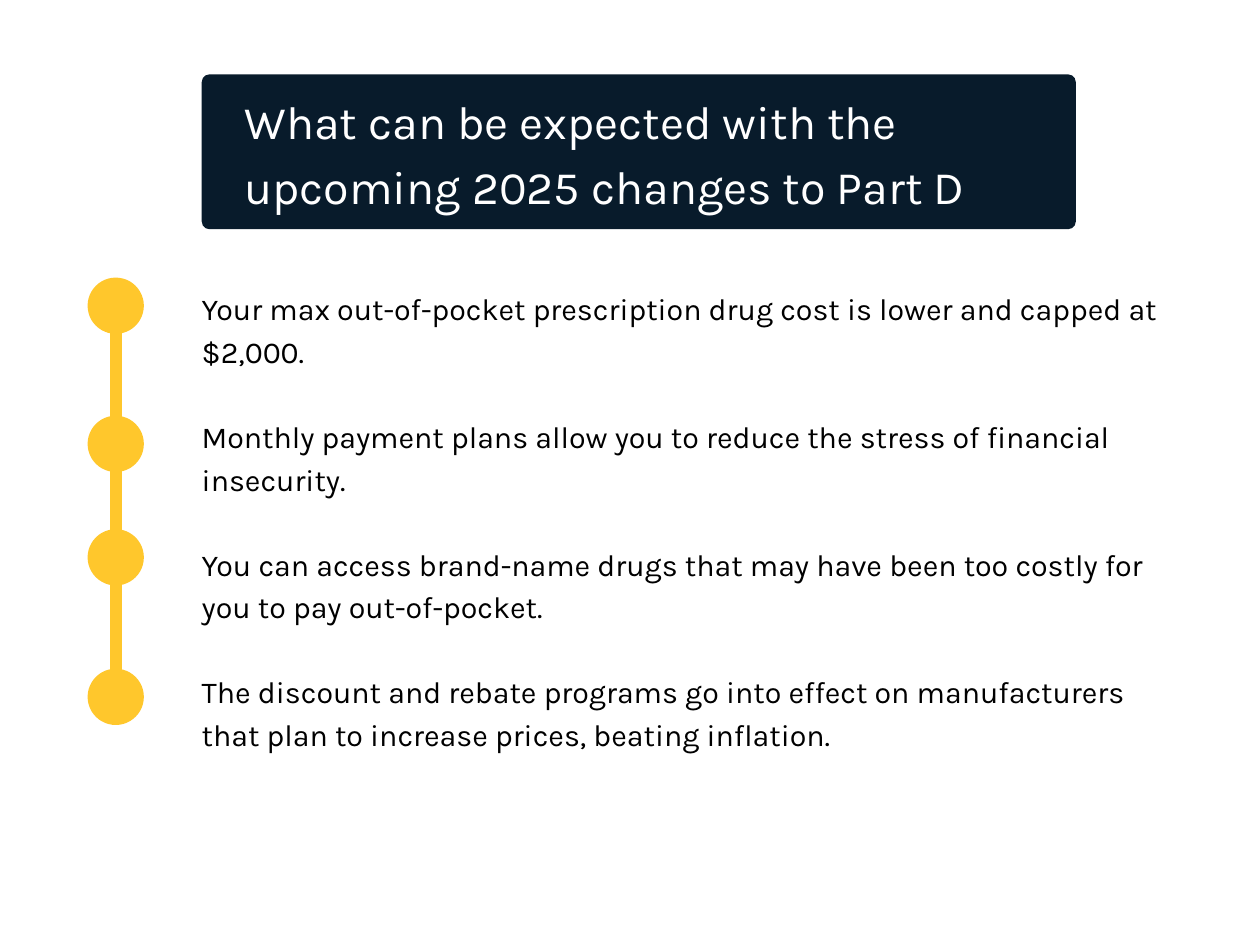
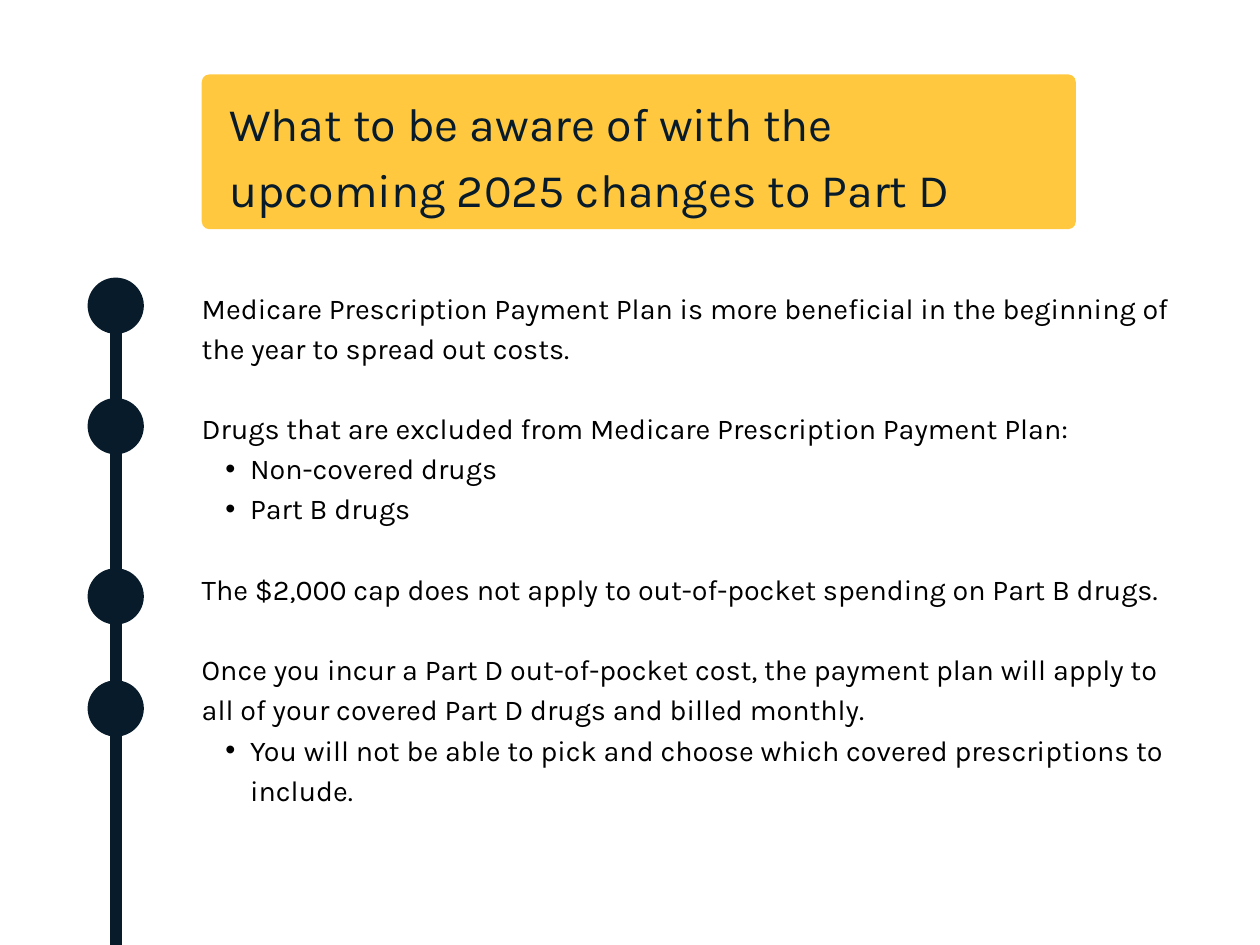
from pptx import Presentation
from pptx.dml.color import RGBColor
from pptx.enum.shapes import MSO_CONNECTOR, MSO_SHAPE
from pptx.oxml.ns import qn
from pptx.util import Cm, Pt
from lxml import etree

NAVY, GOLD, AMBER = "081B2B", "FFC72C", "FFC83F"
BLACK, WHITE = "000000", "FFFFFF"
FONT = "Karla"
SLIDE_W, SLIDE_H = 27.1, 20.32
BANNER = (4.34, 1.6, 18.8, 3.33)
TITLE_SIZE, TITLE_LEADING = 28.4, 39.8
SPINE_X, SPINE_TOP, DOT = 2.49, 6.2, 1.21
BODY_X, BODY_Y = 4.34, 6.12


def rgb(color):
    return RGBColor.from_string(color)


def add_solid(s, kind, box, color):
    sp = s.shapes.add_shape(kind, *map(Cm, box))
    sp.shadow.inherit = False
    sp.fill.solid()
    sp.fill.fore_color.rgb = rgb(color)
    sp.line.fill.background()
    return sp


def add_bullet(p):
    pPr = p._p.get_or_add_pPr()
    pPr.set("marL", str(Cm(1.04)))
    pPr.set("indent", str(-Cm(0.53)))
    etree.SubElement(pPr, qn("a:buFont")).set("typeface", "Arial")
    etree.SubElement(pPr, qn("a:buChar")).set("char", "•")


def add_text(s, box, items, size, leading, color):
    """Write (text, is_bullet) items; plain items stand one line apart."""
    tf = s.shapes.add_textbox(*map(Cm, box)).text_frame
    tf.word_wrap = True
    tf.margin_left = tf.margin_top = tf.margin_right = tf.margin_bottom = 0
    for i, (text, is_bullet) in enumerate(items):
        p = tf.add_paragraph() if i else tf.paragraphs[0]
        if is_bullet:
            p.level = 1
            add_bullet(p)
        p.line_spacing = Pt(leading)
        if i and not is_bullet:
            p.space_before = Pt(leading)
        r = p.add_run()
        r.text = text
        r.font.name = FONT
        r.font.size = Pt(size)
        r.font.color.rgb = rgb(color)


def add_banner(s, box, title, inset, text_w, fill, color):
    x, y, w, h = box
    sp = add_solid(s, MSO_SHAPE.ROUNDED_RECTANGLE, box, fill)
    sp.adjustments[0] = 0.05
    dx, dy = inset
    add_text(s, (x + dx, y + dy, text_w, 2.69), [(title, False)],
             TITLE_SIZE, TITLE_LEADING, color)


def add_timeline(s, x, top, bottom, dot_tops, color):
    line = s.shapes.add_connector(MSO_CONNECTOR.STRAIGHT,
                                  Cm(x), Cm(bottom), Cm(x), Cm(top))
    line.line.color.rgb = rgb(color)
    line.line.width = Pt(7.5)
    etree.SubElement(line._element.spPr, qn("a:effectLst"))
    for dot_top in dot_tops:
        add_solid(s, MSO_SHAPE.OVAL, (x - DOT / 2, dot_top, DOT, DOT), color)


def add_changes_slide(prs, title, inset, title_w, banner_fill, title_color,
                      spine_color, spine_end, dot_tops,
                      body_size, items, body_w, body_h):
    s = prs.slides.add_slide(prs.slide_layouts[6])
    s.background.fill.solid()
    s.background.fill.fore_color.rgb = rgb(WHITE)
    add_timeline(s, SPINE_X, SPINE_TOP, spine_end, dot_tops, spine_color)
    add_text(s, (BODY_X, BODY_Y, body_w, body_h), items,
             body_size, round(body_size * 1.4, 1), BLACK)
    add_banner(s, BANNER, title, inset, title_w, banner_fill, title_color)


def main():
    prs = Presentation()
    prs.slide_width, prs.slide_height = Cm(SLIDE_W), Cm(SLIDE_H)

    add_changes_slide(
        prs,
        title="What can be expected with the upcoming 2025 changes to Part D",
        inset=(0.92, 0.2), title_w=16.89,
        banner_fill=NAVY, title_color=WHITE,
        spine_color=GOLD, spine_end=15.04,
        dot_tops=(5.97, 8.94, 11.38, 14.38),
        body_size=18.5, body_w=21.06, body_h=10.13,
        items=[
            ("Your max out-of-pocket prescription drug cost is lower and "
             "capped at $2,000.", False),
            ("Monthly payment plans allow you to reduce the stress of "
             "financial insecurity.", False),
            ("You can access brand-name drugs that may have been too costly "
             "for you to pay out-of-pocket.", False),
            ("The discount and rebate programs go into effect on "
             "manufacturers that plan to increase prices, beating "
             "inflation.", False),
        ])

    add_changes_slide(
        prs,
        title="What to be aware of with the upcoming 2025 changes to Part D",
        inset=(0.59, 0.25), title_w=17.63,
        banner_fill=AMBER, title_color=NAVY,
        spine_color=NAVY, spine_end=SLIDE_H,
        dot_tops=(5.97, 8.56, 12.22, 14.63),
        body_size=17.5, body_w=21.39, body_h=15.19,
        items=[
            ("Medicare Prescription Payment Plan is more beneficial in the "
             "beginning of the year to spread out costs.", False),
            ("Drugs that are excluded from Medicare Prescription Payment "
             "Plan:", False),
            ("Non-covered drugs", True),
            ("Part B drugs", True),
            ("The $2,000 cap does not apply to out-of-pocket spending on "
             "Part B drugs.", False),
            ("Once you incur a Part D out-of-pocket cost, the payment plan "
             "will apply to all of your covered Part D drugs and billed "
             "monthly.", False),
            ("You will not be able to pick and choose which covered "
             "prescriptions to include.", True),
        ])

    prs.save("out.pptx")


if __name__ == "__main__":
    main()
